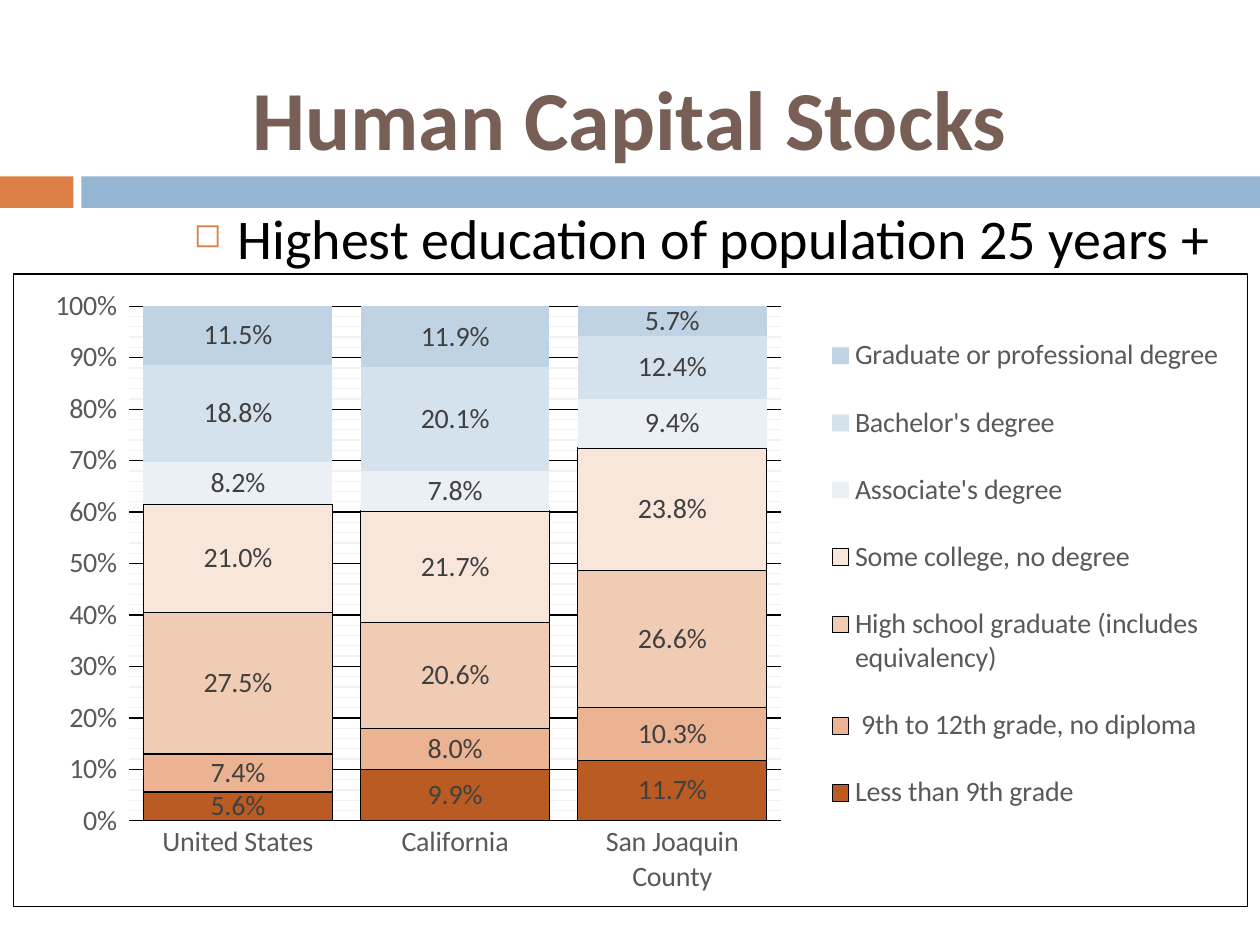
from dataclasses import dataclass
from typing import Optional

from lxml.etree import SubElement
from pptx import Presentation
from pptx.chart.data import CategoryChartData
from pptx.dml.color import RGBColor
from pptx.enum.chart import XL_CHART_TYPE as ChartType
from pptx.enum.chart import XL_LEGEND_POSITION as LegendPos
from pptx.enum.chart import XL_TICK_MARK as Tick
from pptx.enum.shapes import MSO_SHAPE as Shape
from pptx.enum.text import MSO_ANCHOR as Anchor
from pptx.enum.text import PP_ALIGN as Align
from pptx.oxml import parse_xml
from pptx.oxml.ns import nsdecls, qn
from pptx.util import Pt

FONT = "Calibri"
BLACK = RGBColor(0x00, 0x00, 0x00)
WHITE = RGBColor(0xFF, 0xFF, 0xFF)
BROWN = RGBColor(0x77, 0x5F, 0x55)
ORANGE = RGBColor(0xDD, 0x80, 0x47)
BLUE = RGBColor(0x94, 0xB6, 0xD2)
GRAY = RGBColor(0x59, 0x59, 0x59)
DARK_GRAY = RGBColor(0x40, 0x40, 0x40)
LIGHT_GRAY = RGBColor(0xF2, 0xF2, 0xF2)
REGIONS = ("United States", "California", "San Joaquin County")


@dataclass(frozen=True)
class Band:
    left: float
    width: float
    color: RGBColor


@dataclass(frozen=True)
class Level:
    name: str
    shares: tuple[float, ...]
    color: RGBColor
    line: Optional[RGBColor] = None


BANDS = (Band(0, 42, ORANGE), Band(46.5, 673.5, BLUE))
LEVELS = (
    Level("Less than 9th grade", (0.056, 0.099, 0.117), RGBColor(0xB9, 0x5B, 0x22), BLACK),
    Level(" 9th to 12th grade, no diploma", (0.074, 0.08, 0.103), RGBColor(0xEB, 0xB3, 0x91), BLACK),
    Level("High school graduate (includes equivalency)", (0.275, 0.206, 0.266),
          RGBColor(0xF1, 0xCC, 0xB5), BLACK),
    Level("Some college, no degree", (0.21, 0.217, 0.238), RGBColor(0xF8, 0xE6, 0xDA), BLACK),
    Level("Associate's degree", (0.082, 0.078, 0.094), RGBColor(0xEA, 0xF0, 0xF6)),
    Level("Bachelor's degree", (0.188, 0.201, 0.124), RGBColor(0xD4, 0xE2, 0xED)),
    Level("Graduate or professional degree", (0.115, 0.119, 0.057), RGBColor(0xBF, 0xD3, 0xE4)),
)


def set_font(font, size: float, color: RGBColor, bold: bool = False) -> None:
    font.name = FONT
    font.size = Pt(size)
    font.bold = bold
    font.color.rgb = color


def set_line(line, color: RGBColor) -> None:
    line.color.rgb = color
    line.width = Pt(0.75)


def add_band(s, band: Band) -> None:
    sp = s.shapes.add_shape(Shape.RECTANGLE, Pt(band.left), Pt(100.8), Pt(band.width), Pt(18))
    sp.shadow.inherit = False
    sp.fill.solid()
    sp.fill.fore_color.rgb = band.color
    sp.line.fill.background()


def add_text(s, box: tuple[float, ...], text: str, size: float, color: RGBColor, bold: bool = False):
    tf = s.shapes.add_textbox(*map(Pt, box)).text_frame
    tf.word_wrap = True
    p = tf.paragraphs[0]
    r = p.add_run()
    r.text = text
    set_font(r.font, size, color, bold)
    return tf


def add_bullet(p, char: str, color: RGBColor) -> None:
    pPr = p._p.get_or_add_pPr()
    pPr.set("marL", str(Pt(25)))
    pPr.set("indent", str(-Pt(25)))
    SubElement(SubElement(pPr, qn("a:buClr")), qn("a:srgbClr"), val=str(color))
    SubElement(pPr, qn("a:buSzPct"), val="60000")
    SubElement(pPr, qn("a:buChar"), char=char)


def make_layout(x: float, y: float, w: float, h: float, inner: bool = False):
    target = '<c:layoutTarget val="inner"/>' if inner else ""
    return parse_xml(
        f'<c:layout {nsdecls("c")}><c:manualLayout>{target}'
        '<c:xMode val="edge"/><c:yMode val="edge"/>'
        f'<c:x val="{x}"/><c:y val="{y}"/><c:w val="{w}"/><c:h val="{h}"/>'
        '</c:manualLayout></c:layout>')


def make_format(line: RGBColor, fill: Optional[RGBColor] = None):
    solid = '<a:solidFill><a:srgbClr val="{}"/></a:solidFill>'
    inside = solid.format(fill) if fill is not None else ""
    return parse_xml(
        f'<c:spPr {nsdecls("c", "a")}>{inside}'
        f'<a:ln w="{Pt(0.75)}">{solid.format(line)}</a:ln></c:spPr>')


def format_series(series, level: Level) -> None:
    series.invert_if_negative = False
    series.format.fill.solid()
    series.format.fill.fore_color.rgb = level.color
    if level.line is None:
        series.format.line.fill.background()
    else:
        set_line(series.format.line, level.line)
    labels = series.data_labels
    labels.show_value = True
    labels.number_format = "0.0%"
    labels.number_format_is_linked = False
    set_font(labels.font, 16, DARK_GRAY)


def format_axes(chart) -> None:
    cat, val = chart.category_axis, chart.value_axis
    for axis in (cat, val):
        set_font(axis.tick_labels.font, 16, GRAY)
    cat.major_tick_mark = Tick.NONE
    set_line(cat.format.line, BLACK)
    val.major_tick_mark = Tick.OUTSIDE
    val.format.line.fill.background()
    val.minimum_scale, val.maximum_scale = 0, 1
    val.major_unit, val.minor_unit = 0.1, 0.02
    val.tick_labels.number_format = "0%"
    val.tick_labels.number_format_is_linked = False
    val.has_major_gridlines = val.has_minor_gridlines = True
    set_line(val.major_gridlines.format.line, BLACK)
    val._element.find(qn("c:minorGridlines")).append(make_format(LIGHT_GRAY))


def add_education_chart(s) -> None:
    data = CategoryChartData(number_format="0.0%")
    data.categories = REGIONS
    for level in LEVELS:
        data.add_series(level.name, level.shares)
    chart = s.shapes.add_chart(
        ChartType.COLUMN_STACKED_100, Pt(7.2), Pt(156.25), Pt(706), Pt(362), data).chart
    set_font(chart.font, 16, BLACK)
    chart.has_title = False
    chart_element = chart._chartSpace.find(qn("c:chart"))
    chart_element.addnext(make_format(BLACK, WHITE))
    plot = chart.plots[0]
    plot.vary_by_categories = False
    plot.gap_width, plot.overlap = 15, 100
    for series, level in zip(plot.series, LEVELS):
        format_series(series, level)
    format_axes(chart)
    area = chart_element.find(qn("c:plotArea"))
    for old in area.findall(qn("c:layout")):
        area.remove(old)
    area.insert(0, make_layout(0.094, 0.051, 0.528, 0.814, inner=True))
    chart.has_legend = True
    legend = chart.legend
    legend.position = LegendPos.RIGHT
    legend.include_in_layout = False
    set_font(legend.font, 16, GRAY)
    for old in legend._element.findall(qn("c:layout")):
        legend._element.remove(old)
    legend._element.find(qn("c:legendPos")).addnext(make_layout(0.65, 0.05, 0.34, 0.85))


def main() -> None:
    prs = Presentation()
    prs.slide_width, prs.slide_height = Pt(720), Pt(540)
    s = prs.slides.add_slide(prs.slide_layouts[6])
    for band in BANDS:
        add_band(s, band)
    title = add_text(s, (36, 21.6, 648, 90), "Human Capital Stocks", 48, BROWN, bold=True)
    title.vertical_anchor = Anchor.MIDDLE
    title.paragraphs[0].alignment = Align.CENTER
    body = add_text(s, (103.7, 113, 610, 54), "Highest education of population 25 years +", 32, BLACK)
    p = body.paragraphs[0]
    p.space_before = Pt(7)
    add_bullet(p, "◻", ORANGE)
    add_education_chart(s)
    prs.save("out.pptx")


if __name__ == "__main__":
    main()
